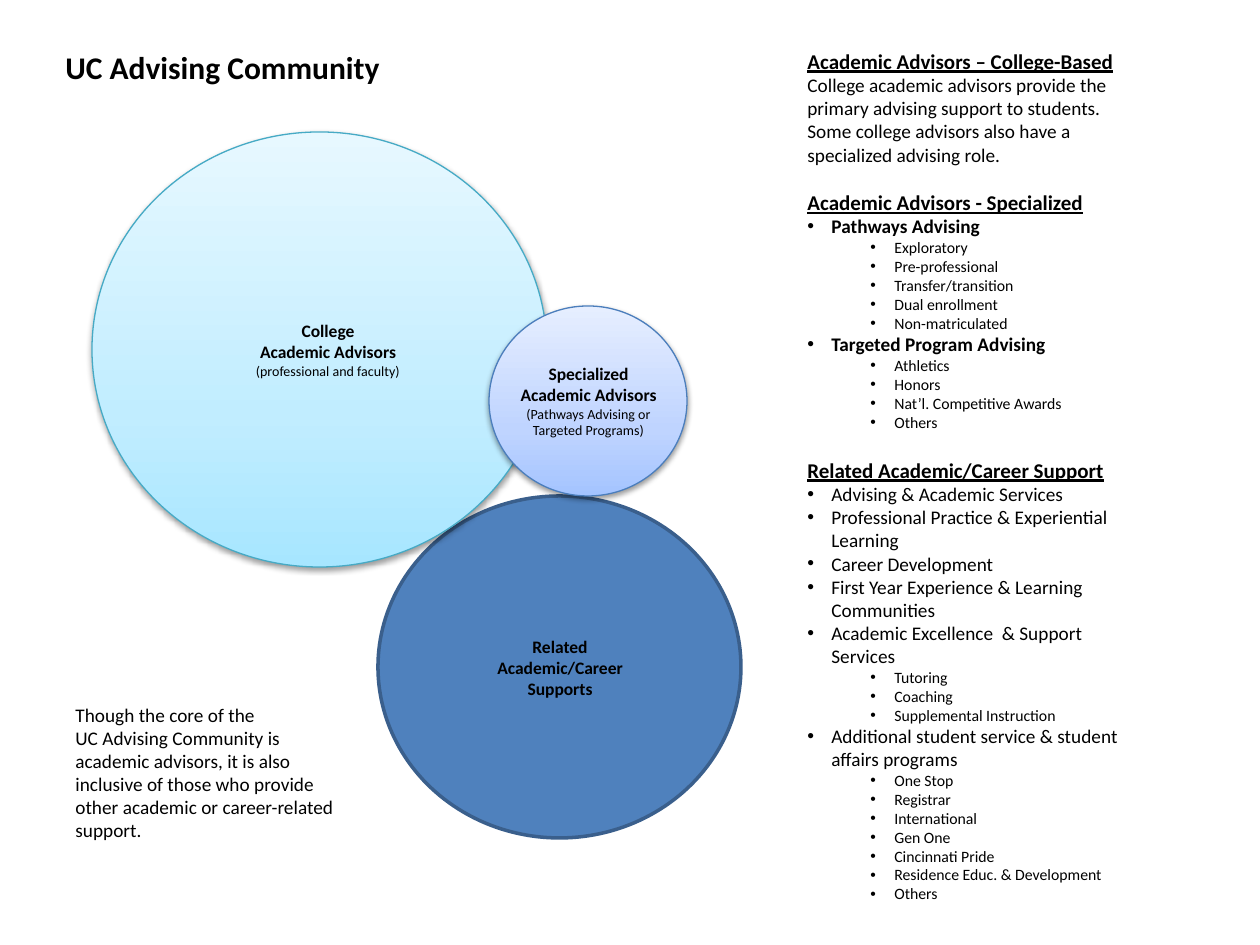
from copy import deepcopy
from dataclasses import dataclass

from lxml.etree import SubElement
from pptx import Presentation
from pptx.dml.color import RGBColor
from pptx.enum.shapes import MSO_SHAPE
from pptx.enum.text import MSO_AUTO_SIZE, PP_ALIGN
from pptx.oxml.ns import qn
from pptx.util import Pt

SCALE = 914400 / 126
FONT = "Calibri"
COLORS = {
    "ink": "000000",
    "support": "4F81BD",
    "support_line": "3A5F8C",
    "college_line": "46AAC5",
    "specialized_line": "4B7EBC",
}
COLLEGE_STOPS = [(0, "A7E6FF"), (0.35, "C1EDFF"), (1, "E7F8FF")]
SPECIALIZED_STOPS = [(0, "A4C4FF"), (0.35, "BFD4FF"), (1, "E6EEFF")]


@dataclass
class TextStyle:
    size: int
    bold: bool = False
    underline: bool = False
    margin: int = 0
    level: int = 0
    before: float = 0


TITLE = TextStyle(18, bold=True)
HEADING = TextStyle(12, bold=True, underline=True)
NEXT_HEADING = TextStyle(12, bold=True, underline=True, before=13.4)
BODY = TextStyle(11)
GROUP = TextStyle(11, bold=True, margin=24)
ITEM = TextStyle(11, margin=24)
SUBITEM = TextStyle(9, margin=87, level=1)
LABEL = TextStyle(10, bold=True)
DETAIL = TextStyle(8)


def emu(px):
    return round(px * SCALE)


class AdvisingSlide:
    """Draws the circles and text of the advising slide."""

    def __init__(self, deck):
        self.page = deck.slides.add_slide(deck.slide_layouts[6])

    def circle(self, place, line, width, fill=None, stops=None):
        shape = self.page.shapes.add_shape(MSO_SHAPE.OVAL, *map(emu, place))
        shape.shadow.inherit = False
        shape.line.color.rgb = RGBColor.from_string(COLORS[line])
        shape.line.width = Pt(width)
        if stops:
            self.gradient(shape, stops)
            self.shadow(shape)
        else:
            shape.fill.solid()
            shape.fill.fore_color.rgb = RGBColor.from_string(COLORS[fill])

    def gradient(self, shape, stops):
        shape.fill.gradient()
        shape.fill.gradient_angle = 90
        stop_list = shape._element.spPr.find(".//" + qn("a:gsLst"))
        stop_list.append(deepcopy(stop_list[-1]))
        for stop, (position, color) in zip(shape.fill.gradient_stops, stops):
            stop.position = position
            stop.color.rgb = RGBColor.from_string(color)

    def shadow(self, shape):
        effects = shape._element.spPr.find(qn("a:effectLst"))
        outer = SubElement(effects, qn("a:outerShdw"), blurRad="40000", dist="20000",
                           dir="5400000", rotWithShape="0")
        color = SubElement(outer, qn("a:srgbClr"), val=COLORS["ink"])
        SubElement(color, qn("a:alpha"), val="38000")

    def text(self, place, paragraphs, align=PP_ALIGN.LEFT):
        box = self.page.shapes.add_textbox(*map(emu, place))
        frame = box.text_frame
        frame.word_wrap = True
        frame.auto_size = MSO_AUTO_SIZE.SHAPE_TO_FIT_TEXT
        for index, (style, *words) in enumerate(paragraphs):
            para = frame.add_paragraph() if index else frame.paragraphs[0]
            para.alignment = align
            para.level = style.level
            if style.before:
                para.space_before = Pt(style.before)
            if style.margin:
                self.bullet(para, style.margin)
            self.font(para.font, style)
            para.add_run().text = words[0]
            if len(words) > 1:
                span = para.add_run()
                span.text = words[1]
                self.font(span.font, DETAIL)

    def bullet(self, para, margin):
        properties = para._p.get_or_add_pPr()
        properties.set("marL", str(emu(margin)))
        properties.set("indent", str(emu(-24)))
        SubElement(properties, qn("a:buFont"), typeface="Arial")
        SubElement(properties, qn("a:buChar"), char="•")

    def font(self, font, style):
        font.name = FONT
        font.size = Pt(style.size)
        font.bold = style.bold
        font.underline = style.underline
        font.color.rgb = RGBColor.from_string(COLORS["ink"])


def styled(style, *lines):
    return [(style, line) for line in lines]


def main():
    deck = Presentation()
    deck.slide_width, deck.slide_height = emu(1260), emu(945)
    slide = AdvisingSlide(deck)

    slide.circle((378, 496, 363, 342), "support_line", 2, fill="support")
    slide.circle((92, 132, 455, 435), "college_line", 0.75, stops=COLLEGE_STOPS)
    slide.circle((489, 306, 198, 190), "specialized_line", 0.75, stops=SPECIALIZED_STOPS)

    slide.text((236, 314, 184, 72), [
        *styled(LABEL, "College", "Academic Advisors"),
        (DETAIL, "(professional and faculty)"),
    ], PP_ALIGN.CENTER)
    slide.text((503, 357, 171, 89), [
        (LABEL, "Specialized Academic Advisors ", "(Pathways Advising or Targeted Programs)"),
    ], PP_ALIGN.CENTER)
    slide.text((456, 630, 208, 77), [(LABEL, "Related Academic/Career Supports")],
               PP_ALIGN.CENTER)

    slide.text((53, 42, 368, 50), [(TITLE, "UC Advising Community")])
    slide.text((795, 42, 357, 398), [
        (HEADING, "Academic Advisors – College-Based"),
        (BODY, "College academic advisors provide the primary advising support to students.  "
               "Some college advisors also have a specialized advising role."),
        (NEXT_HEADING, "Academic Advisors - Specialized"),
        (GROUP, "Pathways Advising"),
        *styled(SUBITEM, "Exploratory", "Pre-professional", "Transfer/transition",
                "Dual enrollment", "Non-matriculated"),
        (GROUP, "Targeted Program Advising"),
        *styled(SUBITEM, "Athletics", "Honors", "Nat’l. Competitive Awards", "Others"),
    ])
    slide.text((795, 451, 353, 462), [
        (HEADING, "Related Academic/Career Support"),
        *styled(ITEM, "Advising & Academic Services",
                "Professional Practice & Experiential Learning", "Career Development",
                "First Year Experience & Learning Communities",
                "Academic Excellence  & Support Services"),
        *styled(SUBITEM, "Tutoring", "Coaching", "Supplemental Instruction"),
        (ITEM, "Additional student service & student affairs programs"),
        *styled(SUBITEM, "One Stop", "Registrar", "International", "Gen One",
                "Cincinnati Pride", "Residence Educ. & Development", "Others"),
    ])
    slide.text((63, 697, 284, 152), styled(
        BODY, "Though the core of the",
        "UC Advising Community is academic advisors, it is also inclusive of those who "
        "provide other academic or career-related support."))

    deck.save("out.pptx")


if __name__ == "__main__":
    main()
